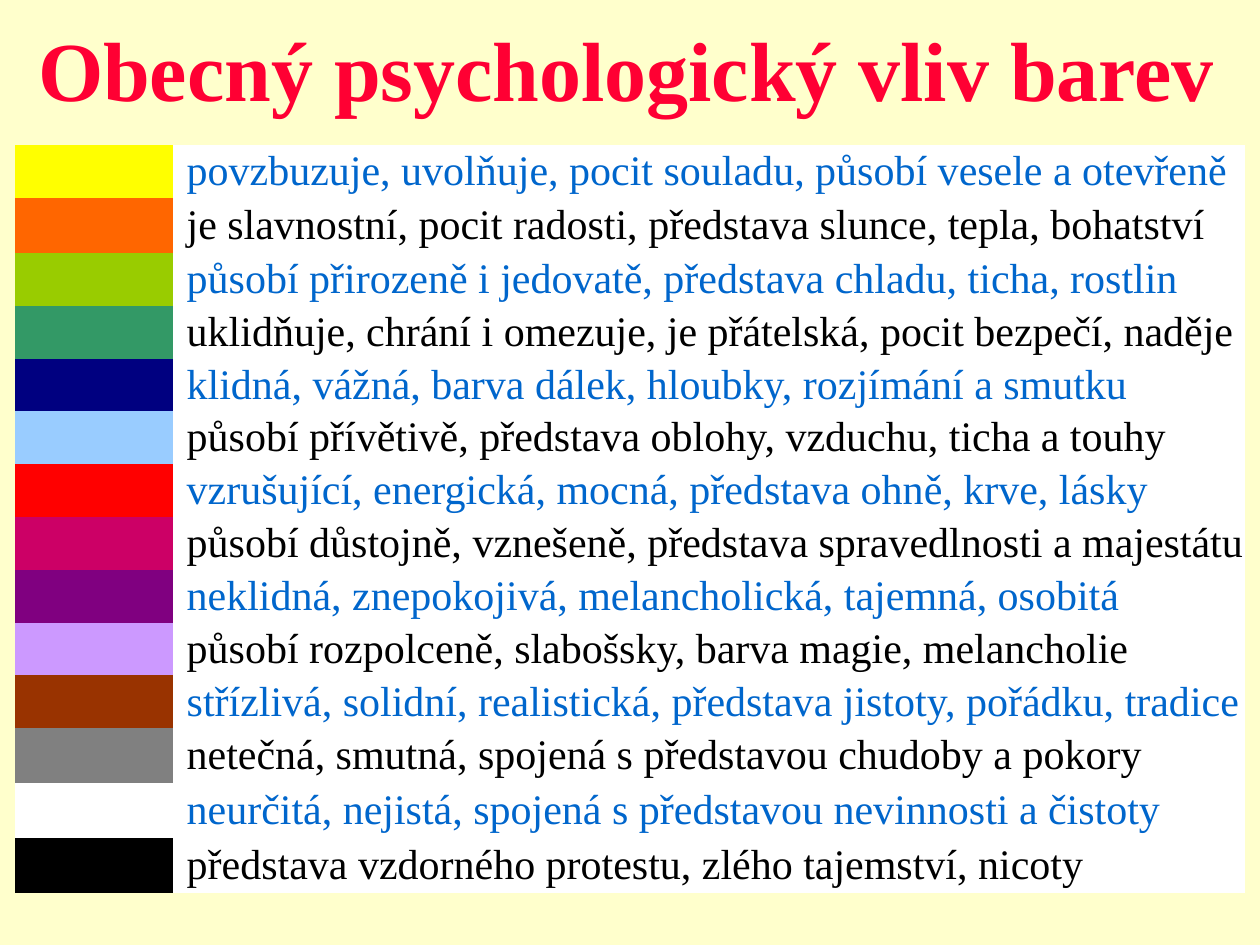
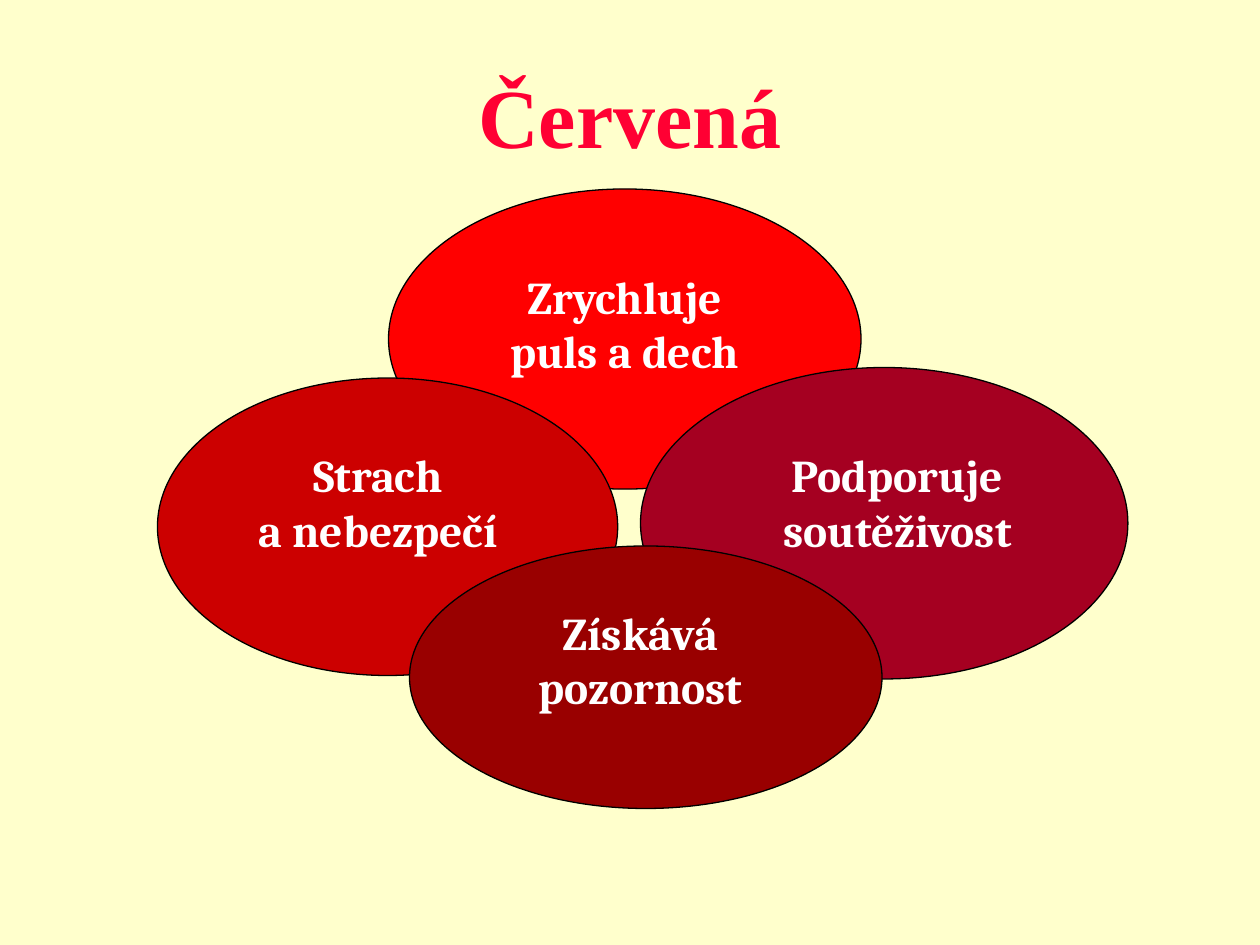
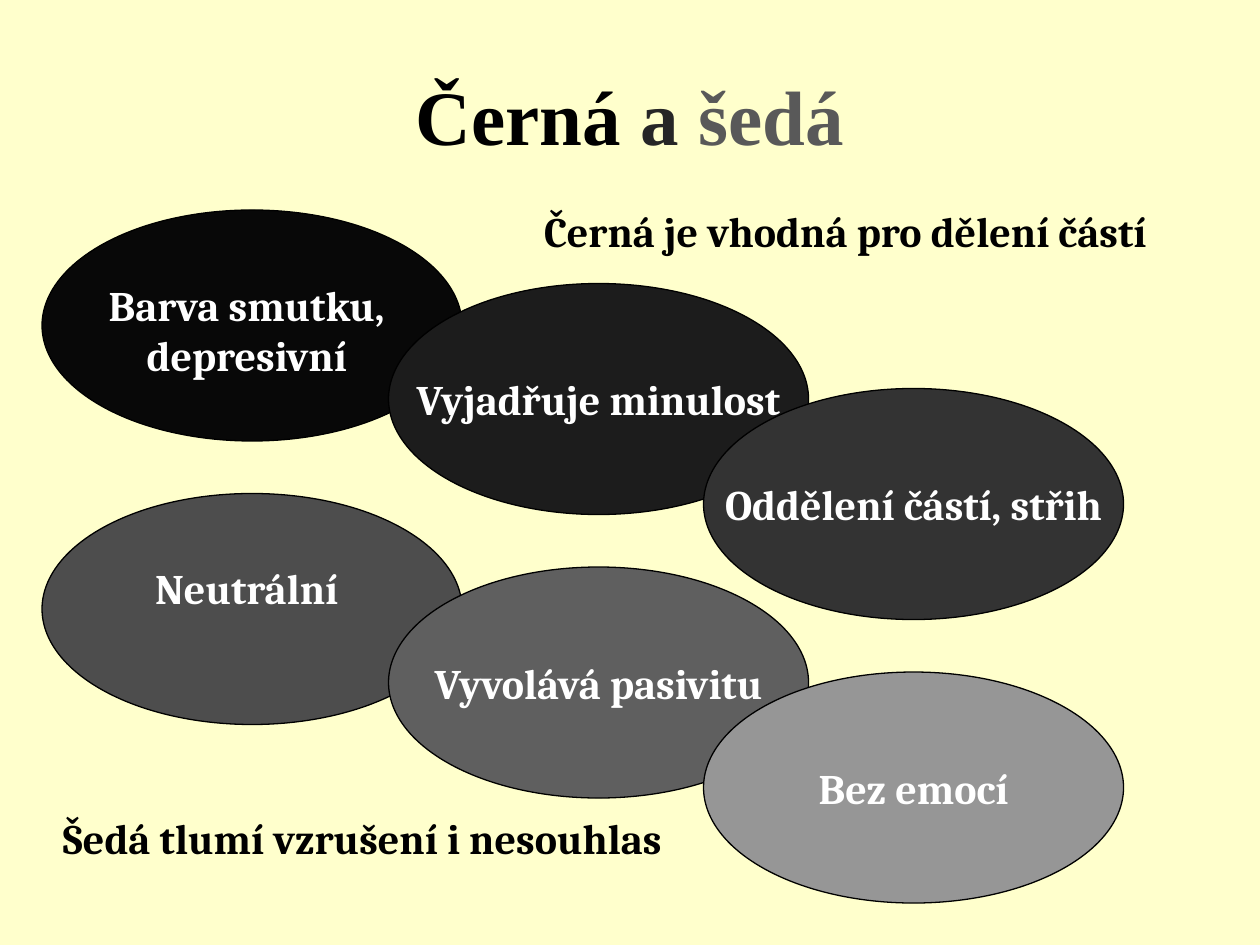
"""Build three slides on the psychological effect of colours."""
from pptx import Presentation
from pptx.dml.color import RGBColor
from pptx.enum.shapes import MSO_SHAPE
from pptx.enum.text import MSO_ANCHOR, PP_ALIGN
from pptx.util import Pt

COLORS = {
    "background": "FFFFCC", "title": "FF0033", "blue": "0066CC",
    "black": "000000", "white": "FFFFFF", "dark": "262626", "grey": "595959",
}
TITLE_FONT, BODY_FONT = "Times New Roman", "Cambria"
NO_STYLE = "{2D5ABB26-0587-4C30-8999-92F81FD0307C}"


def write(tf, text, size=24, color="white", font=BODY_FONT, bold=True, align=PP_ALIGN.CENTER):
    """Append text to the last paragraph; each line break starts a new one."""
    for i, line in enumerate(text.split("\n")):
        p = tf.add_paragraph() if i else tf.paragraphs[-1]
        p.alignment = align
        r = p.add_run()
        r.text = line
        r.font.size = Pt(size)
        r.font.name = font
        r.font.bold = bold
        r.font.color.rgb = RGBColor.from_string(COLORS[color])


def add_frame(s, left, top, width, height, fill=None, anchor=MSO_ANCHOR.TOP):
    """Add an ellipse if a fill is given, else a text box; return its text frame."""
    at = Pt(left), Pt(top), Pt(width), Pt(height)
    if fill:
        sp = s.shapes.add_shape(MSO_SHAPE.OVAL, *at)
        sp.shadow.inherit = False
        sp.fill.solid()
        sp.fill.fore_color.rgb = RGBColor.from_string(fill)
        sp.line.color.rgb = RGBColor.from_string(COLORS["black"])
        sp.line.width = Pt(0.75)
    else:
        sp = s.shapes.add_textbox(*at)
    tf = sp.text_frame
    tf.word_wrap = not fill
    tf.vertical_anchor = anchor
    return tf


prs = Presentation()
prs.slide_width, prs.slide_height = Pt(720), Pt(540)

titles = [
    ((9, 15, 698, 47.5), 48, [("Obecný psychologický vliv barev", "title")]),
    ((54, 42, 612, 47.5), 48, [("Červená", "title")]),
    ((54, 42, 612, 47.5), 44, [("Černá ", "black"), ("a ", "dark"), ("šedá", "grey")]),
]
for at, size, parts in titles:
    s = prs.slides.add_slide(prs.slide_layouts[6])
    s.background.fill.solid()
    s.background.fill.fore_color.rgb = RGBColor.from_string(COLORS["background"])
    tf = add_frame(s, *at, anchor=MSO_ANCHOR.MIDDLE)
    for text, color in parts:
        write(tf, text, size=size, color=color, font=TITLE_FONT)
effects_slide, red_slide, black_slide = prs.slides

LOW, HIGH = 29.8, 31.3
effects = [
    ("FFFF00", LOW, "povzbuzuje, uvolňuje, pocit souladu, působí vesele a otevřeně"),
    ("FF6600", HIGH, "je slavnostní, pocit radosti, představa slunce, tepla, bohatství"),
    ("99CC00", LOW, "působí přirozeně i jedovatě, představa chladu, ticha, rostlin"),
    ("339966", LOW, "uklidňuje, chrání i omezuje, je přátelská, pocit bezpečí, naděje"),
    ("000080", LOW, "klidná, vážná, barva dálek, hloubky, rozjímání a smutku"),
    ("99CCFF", LOW, "působí přívětivě, představa oblohy, vzduchu, ticha a touhy"),
    ("FF0000", LOW, "vzrušující, energická, mocná, představa ohně, krve, lásky"),
    ("CC0066", LOW, "působí důstojně, vznešeně, představa spravedlnosti a majestátu"),
    ("800080", LOW, "neklidná, znepokojivá, melancholická, tajemná, osobitá"),
    ("CC99FF", LOW, "působí rozpolceně, slabošsky, barva magie, melancholie"),
    ("993300", LOW, "střízlivá, solidní, realistická, představa jistoty, pořádku, tradice"),
    ("808080", HIGH, "netečná, smutná, spojená s představou chudoby a pokory"),
    ("FFFFFF", HIGH, "neurčitá, nejistá, spojená s představou nevinnosti a čistoty"),
    ("000000", HIGH, "představa vzdorného protestu, zlého tajemství, nicoty"),
]
table = effects_slide.shapes.add_table(len(effects), 2, Pt(8.6), Pt(83), Pt(703), Pt(423.2)).table
table.first_row = table.horz_banding = False
table._tbl.tblPr[0].text = NO_STYLE
table.columns[0].width, table.columns[1].width = Pt(90.5), Pt(612.5)
for i, (swatch, height, text) in enumerate(effects):
    table.rows[i].height = Pt(height)
    for cell, fill in zip(table.rows[i].cells, (swatch, COLORS["white"])):
        cell.fill.solid()
        cell.fill.fore_color.rgb = RGBColor.from_string(fill)
        cell.vertical_anchor = MSO_ANCHOR.MIDDLE
        cell.margin_left = Pt(7.6)
        cell.margin_right = Pt(0)
        cell.margin_top = cell.margin_bottom = Pt(0.7)
    write(cell.text_frame, text, color="black" if i % 2 else "blue",
          font=TITLE_FONT, bold=False, align=PP_ALIGN.LEFT)

red_ellipses = [
    (222, 108, 270, 171.5, "FF0000"),
    (90, 216, 263, 170, "CC0000"),
    (366, 210, 278.5, 178, "A50021"),
    (234, 312, 270, 150, "990000"),
]
red_labels = [
    (270, 150, 174, "Zrychluje puls a dech"),
    (402, 252, 222, "Podporuje\nsoutěživost"),
    (126, 252, 180, "Strach\na nebezpečí"),
    (258, 342, 216, "Získává pozornost"),
]
for ellipse in red_ellipses:
    add_frame(red_slide, *ellipse)
for left, top, width, text in red_labels:
    write(add_frame(red_slide, left, top, width, 70), text, size=26)

black_rows = [
    (120, ("080808", "1C1C1C", "333333"),
     ("Barva smutku, depresivní", "Vyjadřuje minulost", "Oddělení částí, střih")),
    (324 - 42, ("4D4D4D", "5F5F5F", "969696"),
     ("Neutrální", "Vyvolává pasivitu", "Bez emocí")),
]
for top, fills, texts in black_rows:
    for left, drop, fill, text in zip((24, 222, 402), (0, 42, 102), fills, texts):
        tf = add_frame(black_slide, left, top + drop, 240, 132, fill, MSO_ANCHOR.MIDDLE)
        if left == 24:
            tf = add_frame(black_slide, 48, top + 36, 186, 65)
        write(tf, text)

notes = [
    (288, 114, "Černá je vhodná pro dělení částí"),
    (12, 461, "Šedá tlumí vzrušení i nesouhlas"),
]
for left, top, text in notes:
    write(add_frame(black_slide, left, top, 390, 36), text, color="black")

prs.save("out.pptx")
